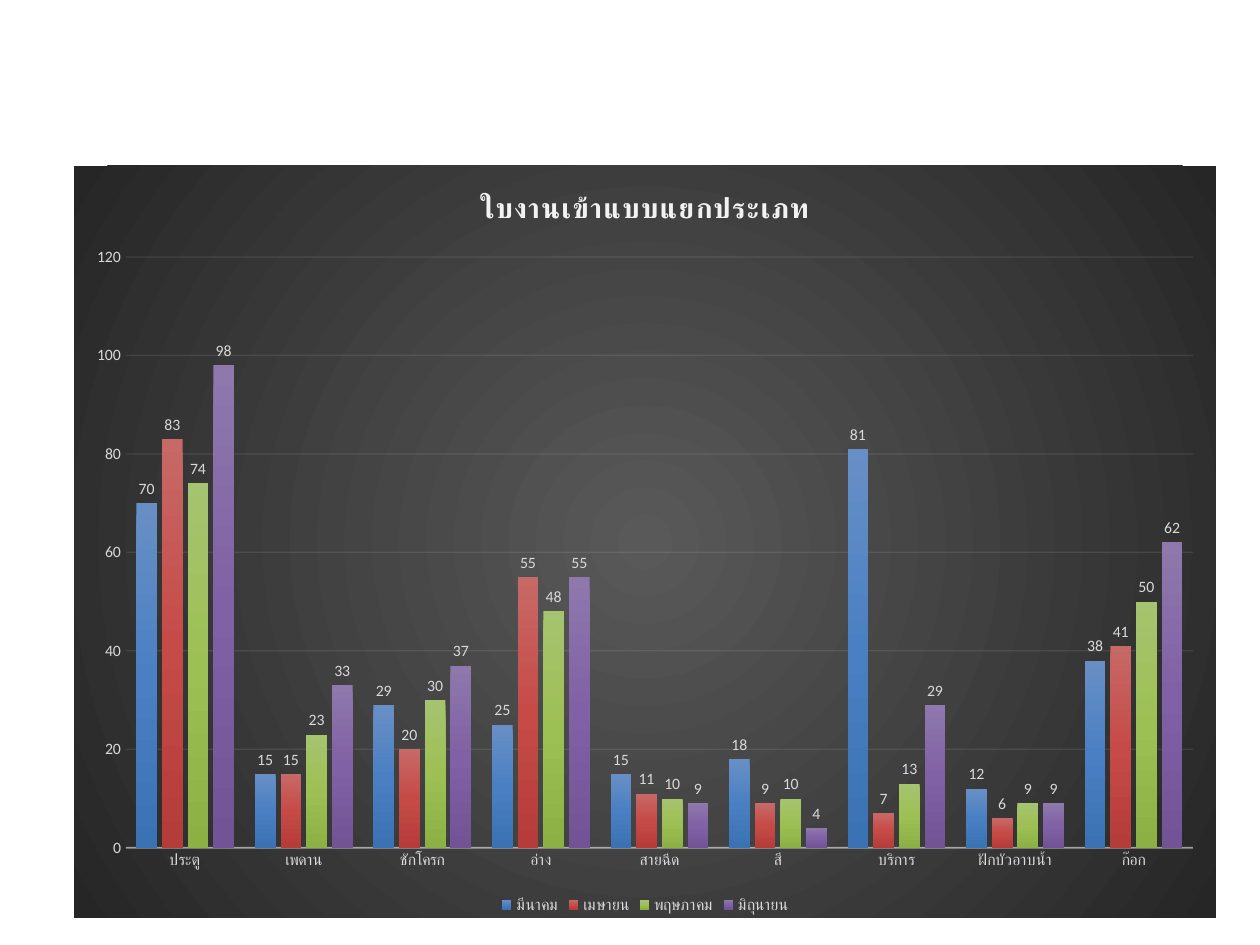
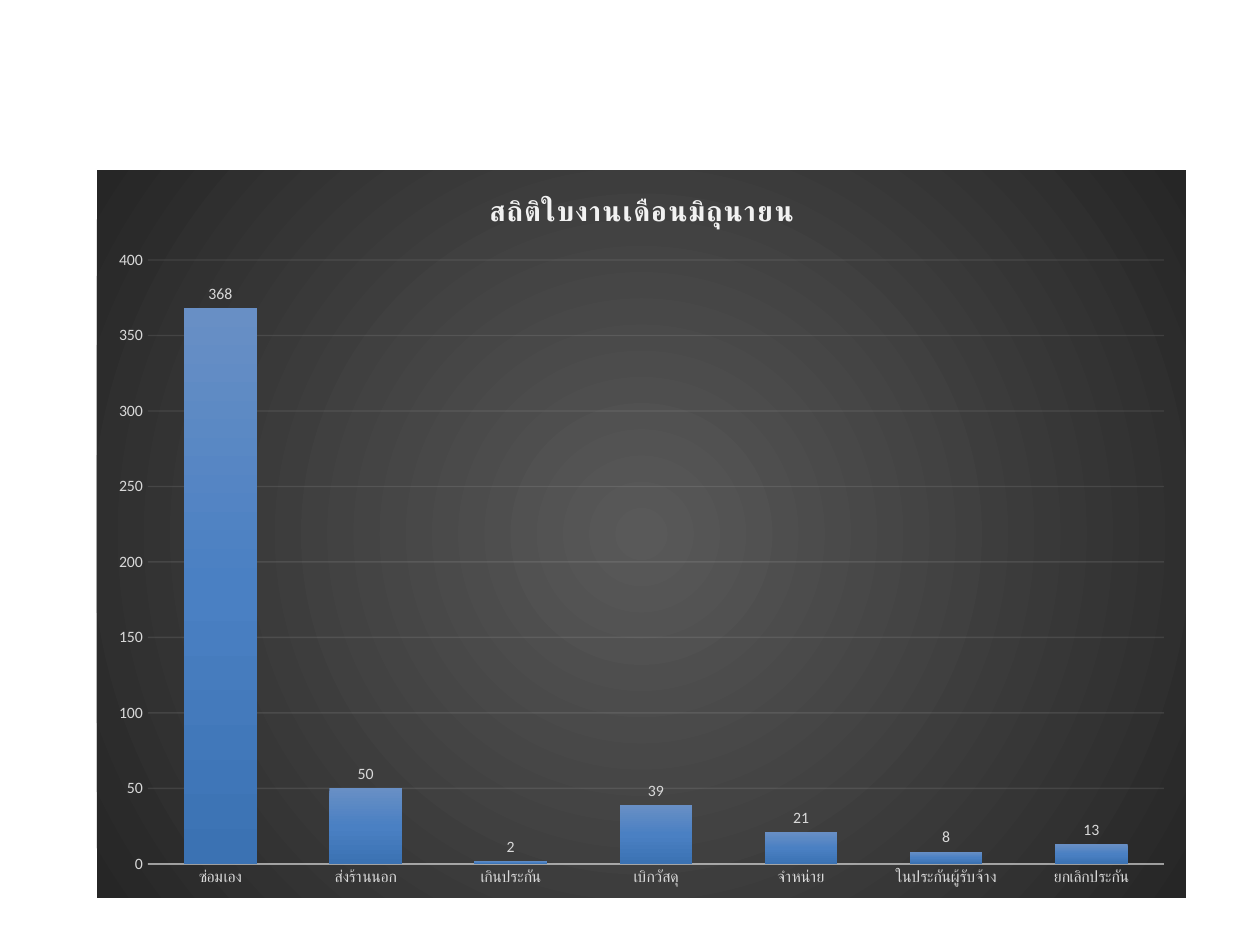
import pptx
import pptx.util
import pptx.oxml
import pptx.oxml.ns
import pptx.dml.color
import pptx.chart.data
import pptx.enum.chart

PX = 914400 / 126  # EMU in one px
FONT = "Calibri"
LIGHT, PALE = "D9D9D9", "F2F2F2"
BACKDROP = ["595959", "262626"]
BLUE = ["688FC5", "4A80C3", "3B72B3"]
RED = ["C76967", "C64B47", "B63C39"]
GREEN = ["A6C36F", "9DC054", "8DB045"]
PURPLE = ["8E78AC", "8061A5", "715396"]
RADIAL = ('<a:path path="circle"><a:fillToRect l="50000" t="50000" '
          'r="50000" b="50000"/></a:path>')
LINEAR = '<a:lin ang="5400000" scaled="0"/>'


def px(n):
    return round(n * PX)


def rgb(code):
    return pptx.dml.color.RGBColor.from_string(code)


def gradient(colors, direction):
    """Evenly spaced gradient stops as a fill element."""
    step = 100000 // (len(colors) - 1)
    stops = "".join(f'<a:gs pos="{i * step}"><a:srgbClr val="{c}"/></a:gs>'
                    for i, c in enumerate(colors))
    return pptx.oxml.parse_xml(
        f'<a:gradFill {pptx.oxml.ns.nsdecls("a")} rotWithShape="1">'
        f'<a:gsLst>{stops}</a:gsLst>{direction}</a:gradFill>')


class Deck:
    def __init__(self):
        self.prs = pptx.Presentation()
        self.prs.slide_width, self.prs.slide_height = px(1260), px(945)
        self.s = None

    def slide(self):
        self.s = self.prs.slides.add_slide(self.prs.slide_layouts[6])

    def font(self, font, size=9, color=LIGHT, **extra):
        values = {"name": FONT, "size": pptx.util.Pt(size), **extra}
        for key, value in values.items():
            setattr(font, key, value)
        font.color.rgb = rgb(color)

    def line(self, fmt, width, opacity):
        fmt.line.color.rgb = rgb(PALE)
        fmt.line.width = pptx.util.Pt(width)
        clr = fmt.line._get_or_add_ln().find(".//" + pptx.oxml.ns.qn("a:srgbClr"))
        clr.append(pptx.oxml.parse_xml(
            f'<a:alpha {pptx.oxml.ns.nsdecls("a")} val="{opacity * 1000}"/>'))

    def title(self, chart, text):
        chart.has_title = True
        p = chart.chart_title.text_frame.paragraphs[0]
        r = p.add_run()
        r.text = text
        self.font(r.font, 16, PALE, bold=True)
        r._r.get_or_add_rPr().set("spc", "100")
        chart.chart_title.include_in_layout = False

    def axes(self, chart, top, step):
        cat, val = chart.category_axis, chart.value_axis
        for axis in (cat, val):
            axis.major_tick_mark = pptx.enum.chart.XL_TICK_MARK.NONE
            axis.minor_tick_mark = pptx.enum.chart.XL_TICK_MARK.NONE
            self.font(axis.tick_labels.font)
        self.line(cat.format, 1, 54)
        val.format.line.fill.background()
        self.line(val.major_gridlines.format, 0.75, 10)
        val.minimum_scale, val.maximum_scale, val.major_unit = 0, top, step

    def layout(self, chart, box, plot):
        """Pin the inner plot area, given in slide px."""
        x, y, w, h = box
        left, top, width, height = plot
        shares = {"x": (left - x) / w, "y": (top - y) / h,
                  "w": width / w, "h": height / h}
        items = "".join(f'<c:{k}Mode val="edge"/>' for k in "xy")
        items += "".join(f'<c:{k} val="{v:.4f}"/>' for k, v in shares.items())
        area = chart._chartSpace.chart.plotArea
        for old in area.findall(pptx.oxml.ns.qn("c:layout")):
            area.remove(old)
        area.insert(0, pptx.oxml.parse_xml(
            f'<c:layout {pptx.oxml.ns.nsdecls("c")}><c:manualLayout>'
            f'<c:layoutTarget val="inner"/>{items}</c:manualLayout></c:layout>'))

    def columns(self, title, cats, series, box, plot, top, step):
        data = pptx.chart.data.CategoryChartData()
        data.categories = cats
        for name, values, _ in series:
            data.add_series(name, values)
        chart = self.s.shapes.add_chart(
            pptx.enum.chart.XL_CHART_TYPE.COLUMN_CLUSTERED,
            *map(px, box), data).chart
        self.font(chart.font, 10, "000000")
        self.title(chart, title)
        self.axes(chart, top, step)
        self.layout(chart, box, plot)

        # Dark radial backdrop
        sp = pptx.oxml.parse_xml(
            f'<c:spPr {pptx.oxml.ns.nsdecls("c", "a")}><a:ln><a:noFill/></a:ln></c:spPr>')
        sp.insert(0, gradient(BACKDROP, RADIAL))
        chart._chartSpace.chart.addnext(sp)

        # Columns and their values
        bars = chart.plots[0]
        bars.gap_width, bars.overlap, bars.vary_by_categories = 100, -24, False
        for ser, (_, _, colors) in zip(bars.series, series):
            ser._element.get_or_add_spPr().append(gradient(colors, LINEAR))
            labels = ser.data_labels
            labels.show_value = True
            labels.position = pptx.enum.chart.XL_LABEL_POSITION.OUTSIDE_END
            self.font(labels.font)

        chart.has_legend = len(series) > 1
        if chart.has_legend:
            chart.legend.position = pptx.enum.chart.XL_LEGEND_POSITION.BOTTOM
            chart.legend.include_in_layout = False
            self.font(chart.legend.font)


def main():
    deck = Deck()

    # Jobs received by type, month by month
    deck.slide()
    deck.columns(
        "ใบงานเข้าแบบแยกประเภท",
        ["ประตู", "เพดาน", "ชักโครก", "อ่าง", "สายฉีด", "สี", "บริการ",
         "ฝักบัวอาบน้ำ", "ก๊อก"],
        [("มีนาคม", [70, 15, 29, 25, 15, 18, 81, 12, 38], BLUE),
         ("เมษายน", [83, 15, 20, 55, 11, 9, 7, 6, 41], RED),
         ("พฤษภาคม", [74, 23, 30, 48, 10, 10, 13, 9, 50], GREEN),
         ("มิถุนายน", [98, 33, 37, 55, 9, 4, 29, 9, 62], PURPLE)],
        box=(74, 166, 1142, 752), plot=(126, 257, 1067, 591), top=120, step=20)

    # June jobs by outcome
    deck.slide()
    deck.columns(
        "สถิติใบงานเดือนมิถุนายน",
        ["ซ่อมเอง", "ส่งร้านนอก", "เกินประกัน", "เบิกวัสดุ", "จำหน่าย",
         "ในประกันผู้รับจ้าง", "ยกเลิกประกัน"],
        [("Series 1", [368, 50, 2, 39, 21, 8, 13], BLUE)],
        box=(97, 170, 1089, 728), plot=(148, 260, 1016, 604), top=400, step=50)

    deck.prs.save("out.pptx")


if __name__ == "__main__":
    main()
